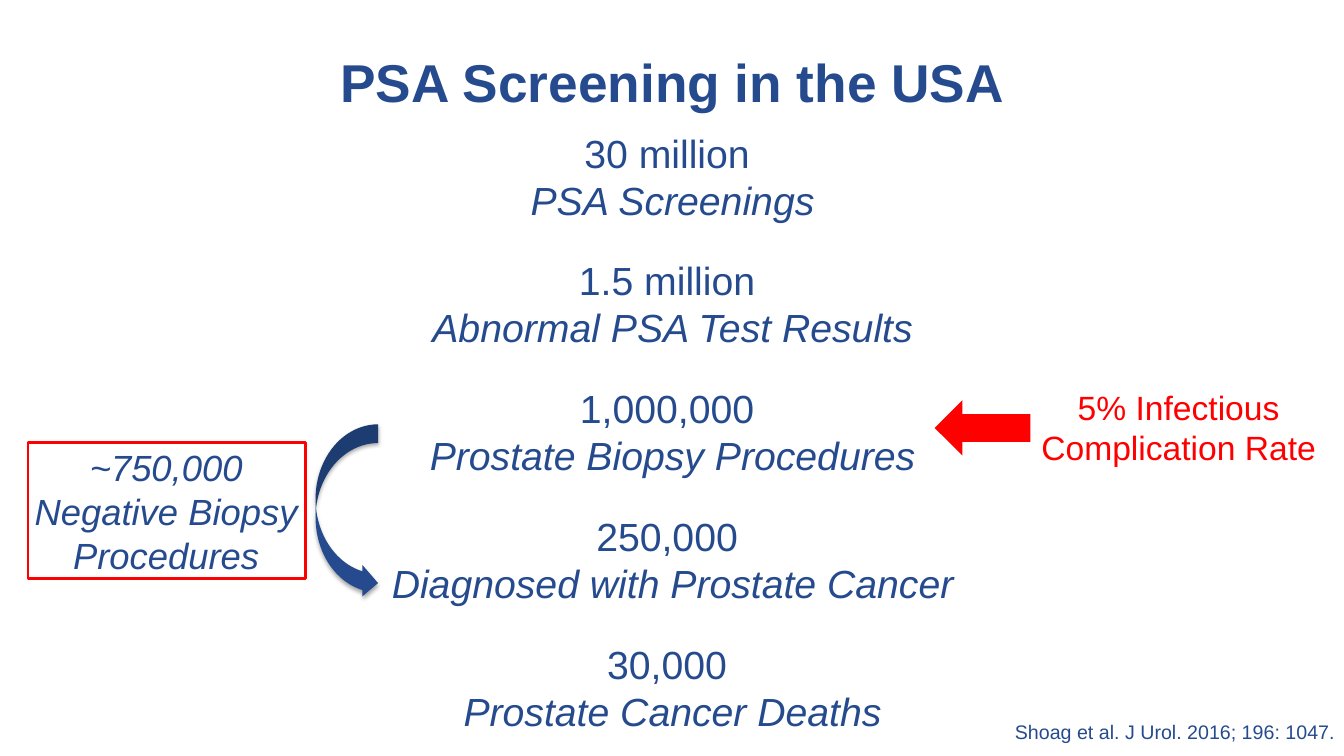
from lxml import etree
from pptx import Presentation
from pptx.dml.color import RGBColor
from pptx.enum.shapes import MSO_SHAPE
from pptx.enum.text import MSO_ANCHOR, PP_ALIGN
from pptx.oxml.ns import qn
from pptx.util import Pt

# Content
TITLE = "PSA Screening in the USA"
FUNNEL = [
    ("30 million ", "PSA Screenings"),
    ("1.5 million ", "Abnormal PSA Test Results"),
    ("1,000,000 ", "Prostate Biopsy Procedures"),
    ("250,000 ", "Diagnosed with Prostate Cancer"),
    ("30,000 ", "Prostate Cancer Deaths"),
]
NEGATIVE = ["~750,000", "Negative Biopsy Procedures"]
COMPLICATION = ["5% Infectious", "Complication Rate"]
CITATION = ["Shoag et al. J Urol. 2016; 196: 1047. "]

# Style
BLUE = RGBColor(0x25, 0x4B, 0x8E)
RED = RGBColor(0xFF, 0x00, 0x00)
FONT = "Arial"
CENTER, RIGHT = PP_ALIGN.CENTER, PP_ALIGN.RIGHT
CURVED_ARROW = MSO_SHAPE.CURVED_LEFT_ARROW
RIGHT_ARROW, RECTANGLE = MSO_SHAPE.RIGHT_ARROW, MSO_SHAPE.RECTANGLE
PX = 9144  # EMU in one px, at 100 px to the inch


def place(*lengths):
    return [length * PX for length in lengths]


def style(para, size, color, align=CENTER, bold=False, italic=False):
    para.alignment = align
    for span in para.runs:
        font = span.font
        font.name, font.size, font.color.rgb = FONT, Pt(size), color
        font.bold, font.italic = bold, italic


def add_text(page, at, lines, size, color, align=CENTER, italic=False, wrap=False):
    box = page.shapes.add_textbox(*place(*at))
    box.text_frame.word_wrap = wrap
    box.text_frame.text = "\n".join(lines)
    for para in box.text_frame.paragraphs:
        style(para, size, color, align, italic=italic)
    return box


def add_solid(page, kind, at, color):
    shape = page.shapes.add_shape(kind, *place(*at))
    shape.shadow.inherit = False
    shape.fill.solid()
    shape.fill.fore_color.rgb = color
    shape.line.fill.background()
    return shape


def add_soft_shadow(shape):
    effects = shape._element.spPr.find(qn("a:effectLst"))
    shadow = etree.SubElement(effects, qn("a:outerShdw"), blurRad=str(Pt(3.1)),
                              dist=str(Pt(1.8)), dir="5400000", rotWithShape="0")
    tint = etree.SubElement(shadow, qn("a:srgbClr"), val="000000")
    etree.SubElement(tint, qn("a:alpha"), val="35000")


deck = Presentation()
deck.slide_width, deck.slide_height = place(1333, 750)
page = deck.slides.add_slide(deck.slide_layouts[5])

# Title
title = page.shapes.title
title.left, title.top, title.width, title.height = place(146, 42, 1042, 85)
title.text_frame.text = TITLE
title.text_frame.vertical_anchor = MSO_ANCHOR.MIDDLE
title.text_frame.paragraphs[0].line_spacing = 0.9
style(title.text_frame.paragraphs[0], 38, BLUE, bold=True)

# Curved arrow from biopsies to diagnoses
curve = add_solid(page, CURVED_ARROW, (313, 421, 62, 173), BLUE)
for index, amount in enumerate((0.3, 0.5, 0.25)):
    curve.adjustments[index] = amount
curve._element.spPr.find(qn("a:xfrm")).set("flipH", "1")
add_soft_shadow(curve)

# Negative biopsies
add_text(page, (17, 437, 296, 141), NEGATIVE, 26, BLUE, italic=True, wrap=True)

# Screening funnel: a count, then its label in italics
steps = [line for step in FUNNEL for line in step]
funnel = add_text(page, (375, 123, 584, 616), steps, 28, BLUE)
for index, para in enumerate(funnel.text_frame.paragraphs):
    if index % 2:
        para.runs[0].font.italic = True
    elif index:
        para.space_before = Pt(24)

# Citation and complication rate
add_text(page, (994, 709, 340, 34), CITATION, 14, BLUE, align=RIGHT)
add_text(page, (1021, 379, 296, 91), COMPLICATION, 24, RED)
arrow = add_solid(page, RIGHT_ARROW, (927, 397, 95, 55), RED)
arrow.rotation = 180

# Frame around the negative biopsies
frame = page.shapes.add_shape(RECTANGLE, *place(28, 439, 275, 135))
frame.shadow.inherit = False
frame.fill.background()
frame.line.color.rgb = RED
frame.line.width = Pt(1.75)

deck.save("out.pptx")
